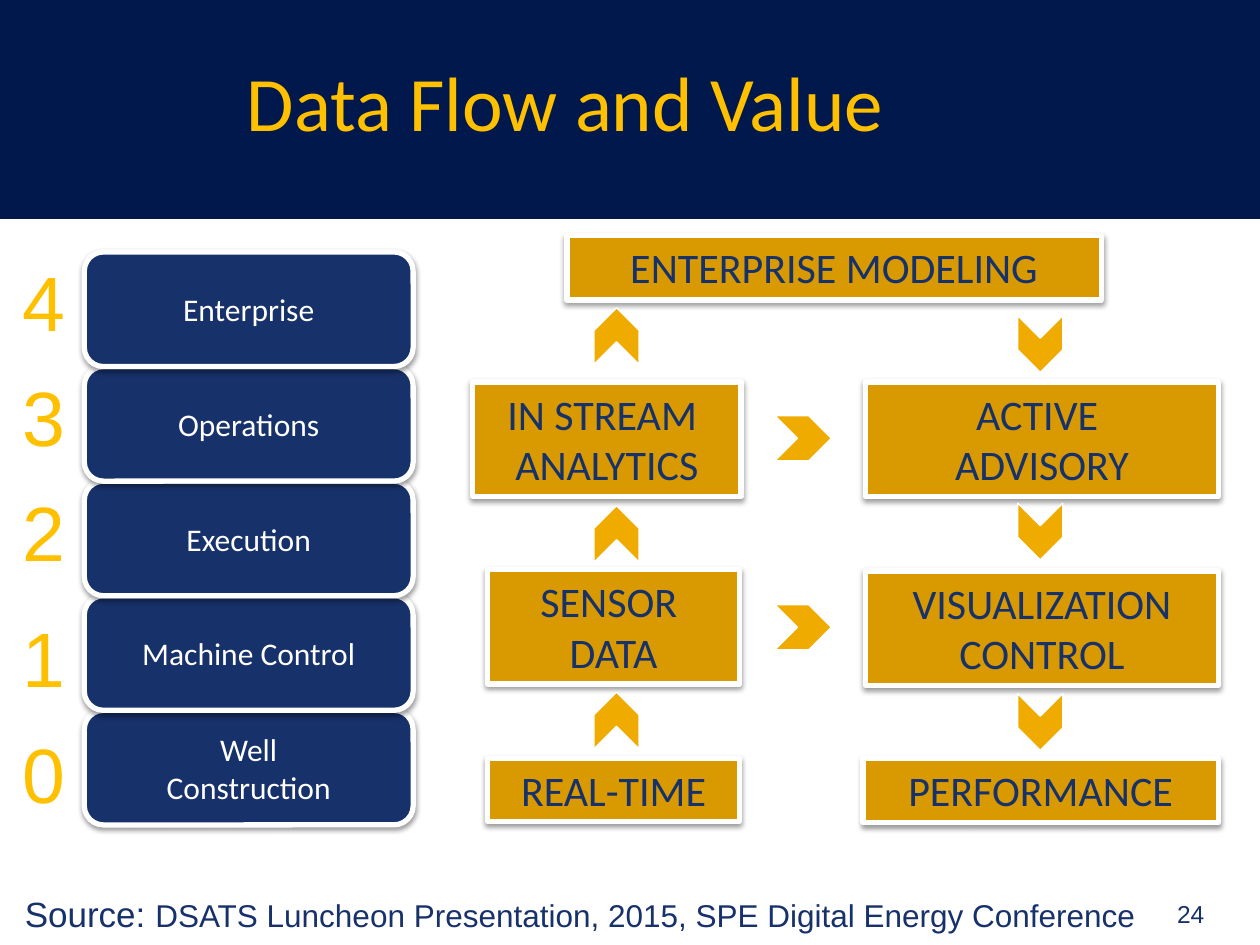
"""Build the Data Flow and Value slide."""
from dataclasses import dataclass

from lxml import etree
from pptx import Presentation
from pptx import util as u
from pptx.dml.color import RGBColor
from pptx.enum import shapes, text
from pptx.oxml import ns

NAVY = RGBColor(0x17, 0x31, 0x6A)
DARK_NAVY = RGBColor(0x00, 0x18, 0x4C)
WHITE = RGBColor(0xFF, 0xFF, 0xFF)
YELLOW = RGBColor(0xFF, 0xC0, 0x00)
GOLD = RGBColor(0xD8, 0x9A, 0x00)
AMBER = RGBColor(0xF0, 0xAB, 0x00)
BLACK = RGBColor(0x00, 0x00, 0x00)

KIND = shapes.MSO_SHAPE
ALIGN = text.PP_ALIGN
ANCHOR = text.MSO_ANCHOR


@dataclass(frozen=True)
class Area:
    left: float
    top: float
    width: float
    height: float

    def lengths(self) -> tuple:
        return tuple(u.Cm(n) for n in (self.left, self.top, self.width, self.height))


@dataclass(frozen=True)
class Style:
    font: str
    size: float
    color: RGBColor


@dataclass(frozen=True)
class Level:
    digit: str
    digit_top: float
    lines: tuple


@dataclass(frozen=True)
class Stage:
    area: Area
    lines: tuple


@dataclass(frozen=True)
class Flow:
    left: float
    rotation: int
    tops: tuple


TITLE = Style("Calibri", 44, YELLOW)
DIGIT = Style("Arial", 44, YELLOW)
LEVEL = Style("Calibri", 18, WHITE)
STAGE = Style("Calibri", 24, NAVY)
PAGE_NUMBER = Style("Arial", 14, NAVY)
SOURCE_LABEL = Style("Arial", 20, NAVY)
SOURCE_TEXT = Style("Arial", 18, NAVY)

LEVEL_TOP, LEVEL_HEIGHT = 5.08, 2.31
LEVELS = (
    Level("4", 5.0, ("Enterprise",)),
    Level("3", 7.32, ("Operations",)),
    Level("2", 9.65, ("Execution",)),
    Level("1", 12.19, ("Machine Control",)),
    Level("0", 14.53, ("Well", "Construction")),
)
STAGES = (
    Stage(Area(9.83, 15.29, 5.08, 1.27), ("REAL-TIME",)),
    Stage(Area(9.83, 11.48, 5.08, 2.31), ("SENSOR ", "DATA")),
    Stage(Area(9.53, 7.7, 5.41, 2.31), ("IN STREAM ", "ANALYTICS")),
    Stage(Area(11.43, 4.75, 10.77, 1.3), ("ENTERPRISE MODELING",)),
    Stage(Area(17.45, 7.7, 7.11, 2.31), ("ACTIVE ", "ADVISORY")),
    Stage(Area(17.45, 11.51, 7.11, 2.31), ("VISUALIZATION", "CONTROL")),
    Stage(Area(17.4, 15.29, 7.16, 1.3), ("PERFORMANCE",)),
)
FLOWS = (
    Flow(11.86, 270, (14.07, 10.31, 6.32)),
    Flow(20.4, 90, (6.48, 10.26, 14.1)),
    Flow(15.62, 0, (8.38, 12.19)),
)


def add_span(para, words: str, style: Style) -> None:
    span = para.add_run()
    span.text = words
    span.font.name = style.font
    span.font.size = u.Pt(style.size)
    span.font.color.rgb = style.color


def write(frame, lines: tuple, style: Style, align, anchor) -> None:
    frame.vertical_anchor = anchor
    for index, line in enumerate(lines):
        para = frame.add_paragraph() if index else frame.paragraphs[0]
        para.alignment = align
        add_span(para, line, style)


def add_shadow(shape, alpha: int, blur: float, distance: float) -> None:
    effects = shape._element.spPr.find(ns.qn("a:effectLst"))
    shadow = etree.SubElement(
        effects, ns.qn("a:outerShdw"), blurRad=str(u.Pt(blur)),
        dist=str(u.Pt(distance)), dir="5400000", rotWithShape="0")
    color = etree.SubElement(shadow, ns.qn("a:srgbClr"), val=str(BLACK))
    etree.SubElement(color, ns.qn("a:alpha"), val=str(alpha * 1000))


def add_block(page, kind, area: Area, fill: RGBColor, line_width: float = 0):
    block = page.shapes.add_shape(kind, *area.lengths())
    block.shadow.inherit = False
    block.fill.solid()
    block.fill.fore_color.rgb = fill
    if line_width:
        block.line.color.rgb = WHITE
        block.line.width = u.Pt(line_width)
    else:
        block.line.fill.background()
    return block


def add_card(page, kind, area: Area, fill: RGBColor, lines: tuple, style: Style, anchor) -> None:
    card = add_block(page, kind, area, fill, 3)
    add_shadow(card, 38, 3.1, 1.6)
    write(card.text_frame, lines, style, ALIGN.CENTER, anchor)


def add_label(page, area: Area, words: str, style: Style, align=ALIGN.LEFT,
              anchor=ANCHOR.TOP, wrap: bool = True):
    box = page.shapes.add_textbox(*area.lengths())
    box.text_frame.word_wrap = wrap
    write(box.text_frame, (words,), style, align, anchor)
    return box


def add_title(page) -> None:
    title = page.shapes.title
    title.left, title.top, title.width, title.height = Area(1.78, 0.43, 19.23, 3.18).lengths()
    write(title.text_frame, ("Data Flow and Value",), TITLE, ALIGN.CENTER, ANCHOR.MIDDLE)


def add_levels(page) -> None:
    for level in LEVELS:
        add_label(page, Area(0.2, level.digit_top, 1.4, 2.13), level.digit, DIGIT, wrap=False)
    for row, level in reversed(list(enumerate(LEVELS))):
        area = Area(1.7, LEVEL_TOP + row * LEVEL_HEIGHT, 6.63, LEVEL_HEIGHT)
        add_card(page, KIND.ROUNDED_RECTANGLE, area, NAVY, level.lines, LEVEL, ANCHOR.MIDDLE)


def add_flows(page) -> None:
    for flow in FLOWS:
        for top in flow.tops:
            chevron = add_block(page, KIND.CHEVRON, Area(flow.left, top, 1.14, 0.91), AMBER, 0.75)
            chevron.rotation = flow.rotation


def main() -> None:
    deck = Presentation()
    deck.slide_width, deck.slide_height = u.Cm(25.4), u.Cm(19.05)
    page = deck.slides.add_slide(deck.slide_layouts[5])
    page.background.fill.solid()
    page.background.fill.fore_color.rgb = DARK_NAVY

    panel = add_block(page, KIND.RECTANGLE, Area(0, 4.42, 25.4, 14.63), WHITE)
    add_shadow(panel, 35, 3.1, 1.8)
    add_title(page)
    add_label(page, Area(19.25, 17.78, 5.28, 1.27), "24", PAGE_NUMBER, ALIGN.RIGHT, ANCHOR.MIDDLE)
    add_levels(page)
    for stage in STAGES:
        add_card(page, KIND.RECTANGLE, stage.area, GOLD, stage.lines, STAGE, ANCHOR.TOP)
    add_flows(page)
    source = add_label(page, Area(0.25, 17.86, 24.56, 1.12), "Source: ", SOURCE_LABEL)
    add_span(source.text_frame.paragraphs[0],
             "DSATS Luncheon Presentation, 2015, SPE Digital Energy Conference", SOURCE_TEXT)
    deck.save("out.pptx")


if __name__ == "__main__":
    main()
